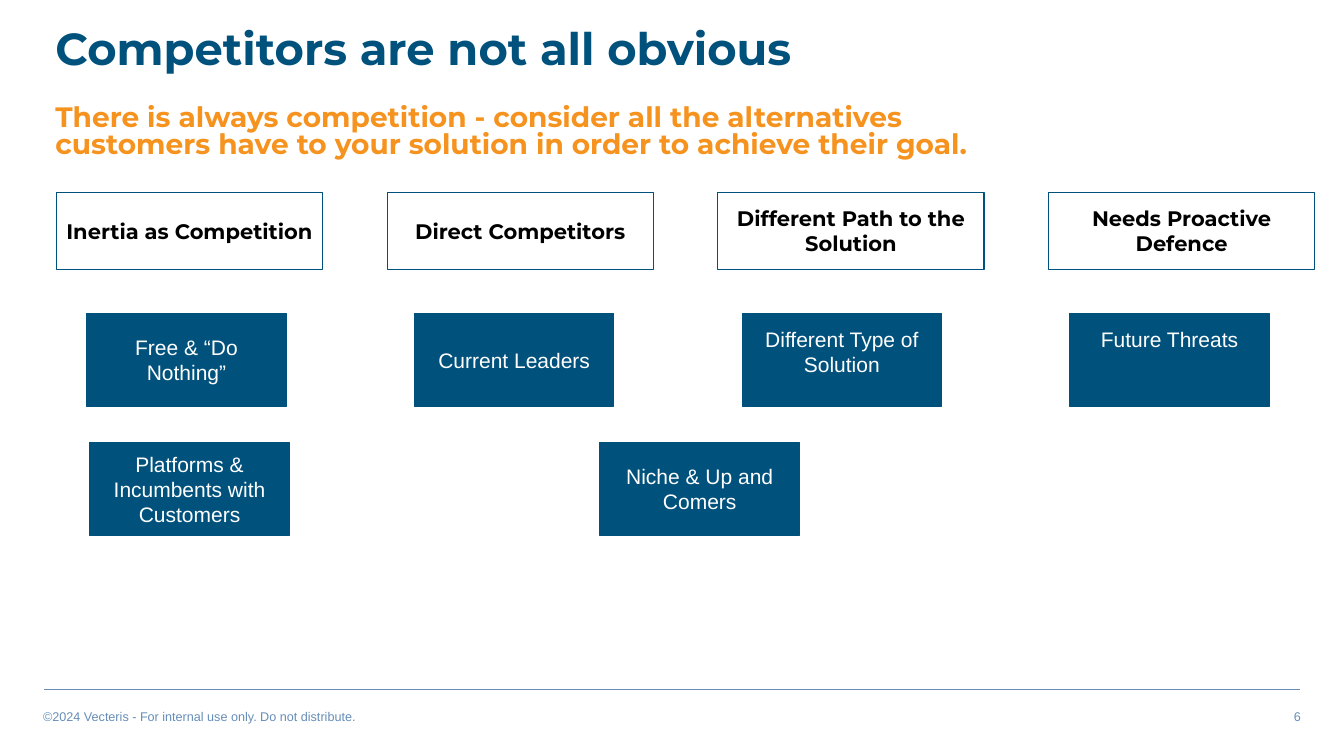
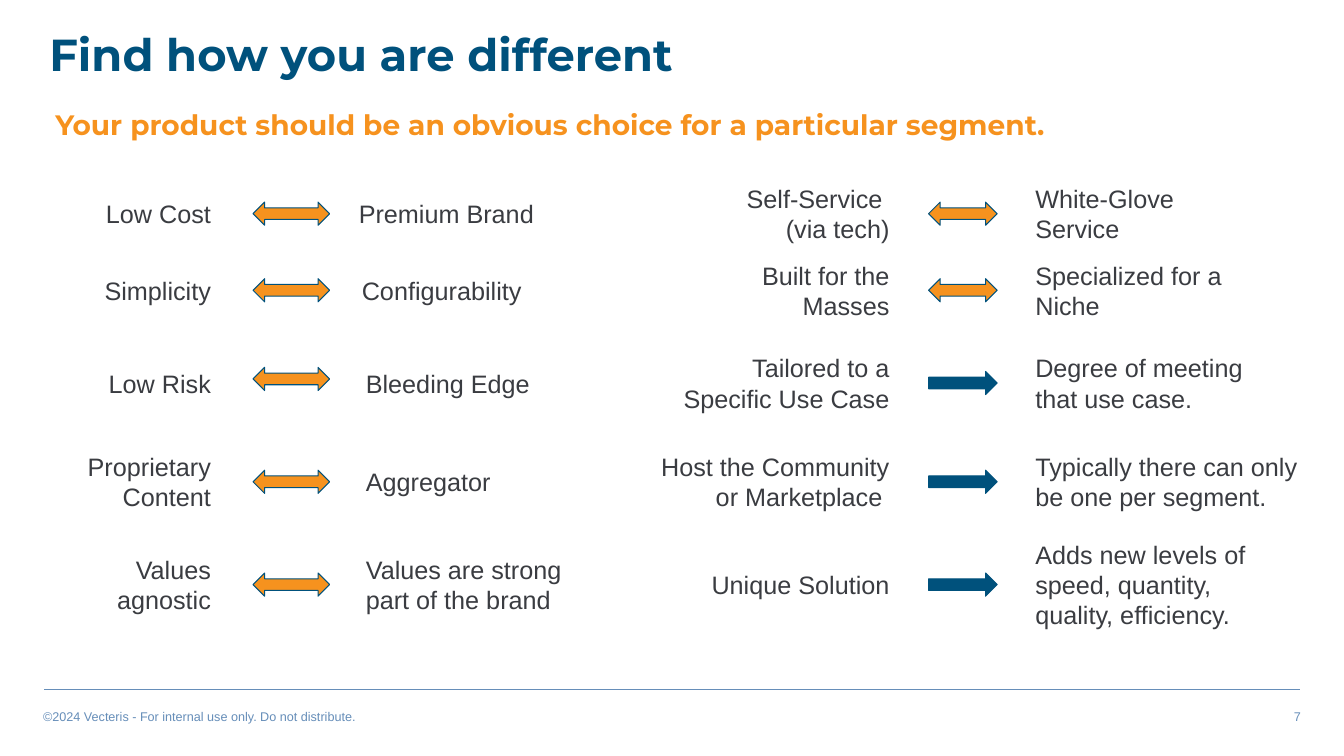
from lxml import etree
from pptx import Presentation
from pptx.dml.color import RGBColor
from pptx.enum.shapes import MSO_CONNECTOR, MSO_SHAPE
from pptx.enum.text import MSO_ANCHOR, PP_ALIGN
from pptx.oxml.ns import qn
from pptx.util import Inches, Pt

NAVY = RGBColor(0x00, 0x51, 0x7C)
ORANGE = RGBColor(0xF6, 0x92, 0x1E)
FOOTER_BLUE = RGBColor(0x66, 0x8E, 0xB9)
CHARCOAL = RGBColor(0x3A, 0x3C, 0x41)
BLACK = RGBColor(0x00, 0x00, 0x00)
WHITE = RGBColor(0xFF, 0xFF, 0xFF)

BODY_FONT = "Arial"
HEAD_FONT = "Montserrat"
COPYRIGHT = "©2024 Vecteris - For internal use only. Do not distribute."


def write(sp, text, size, color, font=BODY_FONT, bold=False, align=PP_ALIGN.LEFT,
          anchor=MSO_ANCHOR.TOP, inset=(0.1, 0.05), spacing=None):
    """Fill a shape with text in one style; inset is (sides, top and bottom)."""
    tf = sp.text_frame
    tf.word_wrap = True
    tf.vertical_anchor = anchor
    tf.margin_left = tf.margin_right = Inches(inset[0])
    tf.margin_top = tf.margin_bottom = Inches(inset[1])
    tf.text = text
    for p in tf.paragraphs:
        p.alignment = align
        if spacing:
            p.line_spacing = spacing
        for r in p.runs:
            r.font.name = font
            r.font.size = Pt(size)
            r.font.bold = bold
            r.font.color.rgb = color


def add_text(slide, box, text, size, color, **style):
    sp = slide.shapes.add_textbox(*map(Inches, box))
    write(sp, text, size, color, **style)


def add_box(slide, kind, box, fill):
    """Add a preset shape with the thin navy outline used throughout."""
    sp = slide.shapes.add_shape(kind, *map(Inches, box))
    sp.shadow.inherit = False
    sp.fill.solid()
    sp.fill.fore_color.rgb = fill
    sp.line.color.rgb = NAVY
    sp.line.width = Pt(0.75)
    return sp


def add_footer(slide, number):
    rule = slide.shapes.add_connector(MSO_CONNECTOR.STRAIGHT, Inches(0.44), Inches(6.84),
                                      Inches(12.89), Inches(6.84))
    rule.line.color.rgb = FOOTER_BLUE
    rule.line.width = Pt(1)
    etree.SubElement(rule._element.spPr, qn("a:effectLst"))
    add_text(slide, (0.33, 6.98, 5.33, 0.25), COPYRIGHT, 9, FOOTER_BLUE)
    add_text(slide, (7.67, 6.98, 5.33, 0.25), str(number), 9, FOOTER_BLUE,
             align=PP_ALIGN.RIGHT)


def add_slide(prs, number, title, title_at, subtitle, subtitle_box, subtitle_spacing):
    """Start a slide with its footer, title and orange subtitle."""
    slide = prs.slides.add_slide(prs.slide_layouts[6])
    add_footer(slide, number)
    add_text(slide, (*title_at, 10.21, 0.76), title, 32, NAVY,
             font=HEAD_FONT, bold=True, spacing=0.9)
    add_text(slide, subtitle_box, subtitle, 20, ORANGE, font=HEAD_FONT, bold=True,
             anchor=MSO_ANCHOR.MIDDLE, spacing=subtitle_spacing)
    return slide


def add_category(slide, left, top, text):
    sp = add_box(slide, MSO_SHAPE.RECTANGLE, (left, top, 2.64, 0.76), WHITE)
    write(sp, text, 15, BLACK, font=HEAD_FONT, bold=True, align=PP_ALIGN.CENTER,
          anchor=MSO_ANCHOR.MIDDLE, inset=(0.1, 0.1))


def add_competitor(slide, left, top, text, anchor=MSO_ANCHOR.MIDDLE):
    sp = add_box(slide, MSO_SHAPE.RECTANGLE, (left, top, 1.98, 0.92), NAVY)
    write(sp, text, 15, WHITE, align=PP_ALIGN.CENTER, anchor=anchor, inset=(0.13, 0.13))


def competitors_slide(prs):
    slide = add_slide(
        prs, 6, "Competitors are not all obvious", (0.45, 0.22),
        "There is always competition - consider all the alternatives customers have "
        "to your solution in order to achieve their goal.",
        (0.45, 0.98, 10.21, 0.67), 0.8)
    columns = [
        ("Inertia as Competition", "Free & “Do Nothing”", MSO_ANCHOR.MIDDLE),
        ("Direct Competitors", "Current Leaders", MSO_ANCHOR.MIDDLE),
        ("Different Path to the Solution", "Different Type of Solution", MSO_ANCHOR.TOP),
        ("Needs Proactive Defence", "Future Threats", MSO_ANCHOR.TOP),
    ]
    for i, (category, competitor, anchor) in enumerate(columns):
        add_category(slide, 0.56 + 3.28 * i, 1.91, category)
        add_competitor(slide, 0.86 + 3.25 * i, 3.11, competitor, anchor)
    add_competitor(slide, 0.89, 4.39, "Platforms & Incumbents with Customers")
    add_competitor(slide, 5.95, 4.39, "Niche & Up and Comers")


def add_contrast(slide, middle, start, end, arrow_box, two_way=True):
    """Place start text, arrow and end text around one middle height.

    start is (text, right edge, width), end is (text, left edge, width),
    arrow_box is (left, width, shift down).
    """
    height, arrow_height = 1.2, 0.23
    top = middle - height / 2
    style = dict(anchor=MSO_ANCHOR.MIDDLE, inset=(0.1, 0.1))
    text, right, width = start
    add_text(slide, (right - width, top, width, height), text, 18, CHARCOAL,
             align=PP_ALIGN.RIGHT, **style)
    text, left, width = end
    add_text(slide, (left, top, width, height), text, 18, CHARCOAL, **style)
    left, width, shift = arrow_box
    kind, fill = ((MSO_SHAPE.LEFT_RIGHT_ARROW, ORANGE) if two_way
                  else (MSO_SHAPE.RIGHT_ARROW, NAVY))
    add_box(slide, kind, (left, middle + shift - arrow_height / 2, width, arrow_height), fill)


def differences_slide(prs):
    slide = add_slide(
        prs, 7, "Find how you are different", (0.39, 0.28),
        "Your product should be an obvious choice for a particular segment.",
        (0.45, 0.95, 10.21, 0.6), 0.9)
    middles = [2.12, 2.88, 3.8, 4.78, 5.8]
    # start text, end text, end left edge, arrow shift
    trade_offs = [
        ("Low Cost", "Premium Brand", 3.46, 0),
        ("Simplicity", "Configurability", 3.49, 0),
        ("Low Risk", "Bleeding Edge", 3.53, -0.04),
        ("Proprietary Content", "Aggregator", 3.53, 0),
        ("Values agnostic", "Values are strong part of the brand", 3.53, 0),
    ]
    # start text, its width, end text, its width, two-way arrow
    positions = [
        ("Self-Service \n(via tech)", 2.25, "White-Glove Service", 2.25, True),
        ("Built for the Masses", 2.25, "Specialized for a Niche", 2.25, True),
        ("Tailored to a Specific Use Case", 2.25, "Degree of meeting that use case.", 2.54, False),
        ("Host the Community or Marketplace ", 2.54,
         "Typically there can only be one per segment.", 2.81, False),
        ("Unique Solution", 2.25,
         "Adds new levels of speed, quantity, quality, efficiency.", 2.54, False),
    ]
    for middle, (start, end, left, shift) in zip(middles, trade_offs):
        add_contrast(slide, middle, (start, 2.19, 1.79), (end, left, 2.25),
                     (2.51, 0.76, shift))
    for middle, (start, start_width, end, end_width, two_way) in zip(middles, positions):
        add_contrast(slide, middle, (start, 8.92, start_width), (end, 10.17, end_width),
                     (9.21, 0.68, 0), two_way)


def main():
    prs = Presentation()
    prs.slide_width = Inches(13.33)
    prs.slide_height = Inches(7.5)
    competitors_slide(prs)
    differences_slide(prs)
    prs.save("out.pptx")


if __name__ == "__main__":
    main()
